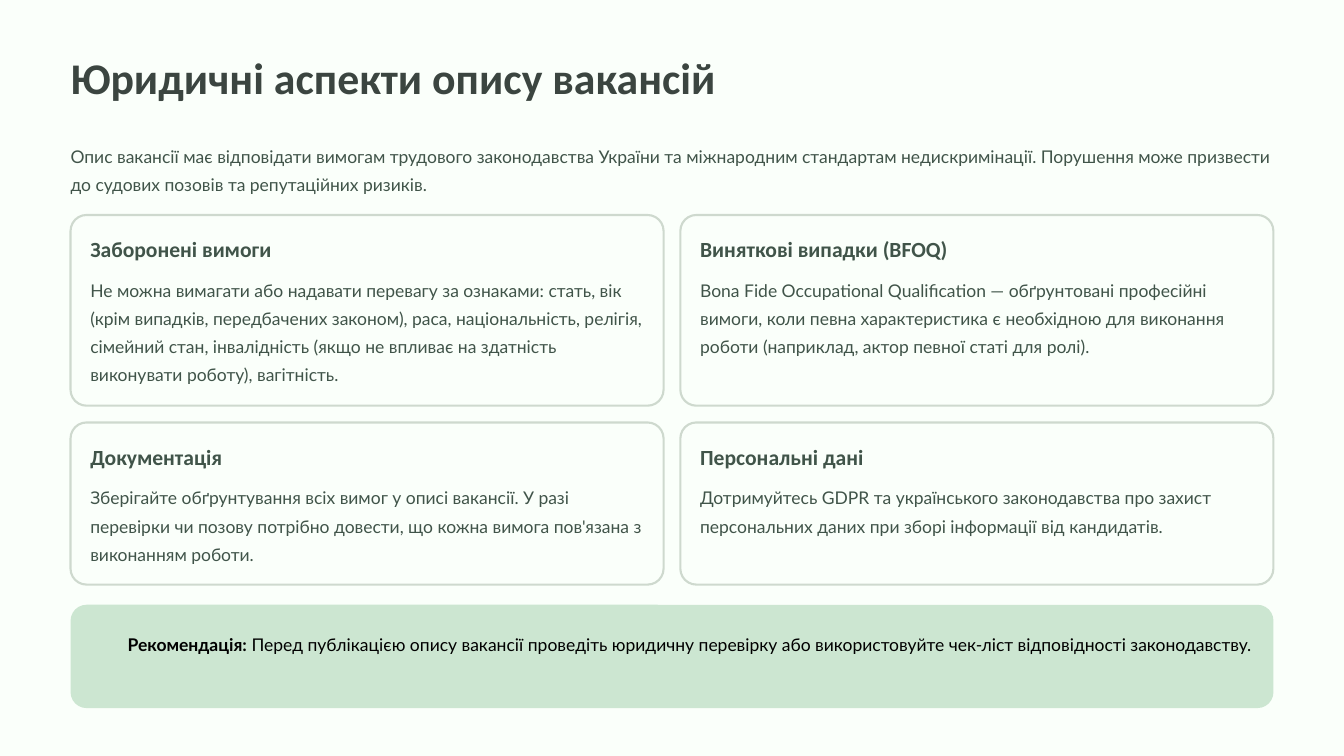
from pptx import Presentation
from pptx.dml.color import RGBColor
from pptx.enum import shapes, text
from pptx.util import Inches, Pt

# Content
TITLE = "Юридичні аспекти опису вакансій"
INTRO = ("Опис вакансії має відповідати вимогам трудового законодавства України та міжнародним "
         "стандартам недискримінації. Порушення може призвести до судових позовів та "
         "репутаційних ризиків.")
CARD_ROWS = [
    [("Заборонені вимоги",
      "Не можна вимагати або надавати перевагу за ознаками: стать, вік (крім випадків, "
      "передбачених законом), раса, національність, релігія, сімейний стан, інвалідність "
      "(якщо не впливає на здатність виконувати роботу), вагітність."),
     ("Виняткові випадки (BFOQ)",
      "Bona Fide Occupational Qualification — обґрунтовані професійні вимоги, коли певна "
      "характеристика є необхідною для виконання роботи (наприклад, актор певної статі для ролі).")],
    [("Документація",
      "Зберігайте обґрунтування всіх вимог у описі вакансії. У разі перевірки чи позову "
      "потрібно довести, що кожна вимога пов'язана з виконанням роботи."),
     ("Персональні дані",
      "Дотримуйтесь GDPR та українського законодавства про захист персональних даних при "
      "зборі інформації від кандидатів.")],
]
ADVICE_LABEL = "Рекомендація:"
ADVICE = (" Перед публікацією опису вакансії проведіть юридичну перевірку або використовуйте "
          "чек-ліст відповідності законодавству.")

COLORS = {"paper": "FAFFFA", "title": "3B4540", "body": "405449",
          "border": "CED9CE", "advice": "CCE6D1", "black": "000000"}

# Layout in inches
MARGIN, CONTENT_WIDTH = 0.84, 14.32
CARD_WIDTH, GAP, PADDING = 7.06, 0.2, 0.235
CARDS_TOP, ROW_HEIGHTS = 2.56, [2.27, 1.93]
HEADING_HEIGHT, BODY_OFFSET = 0.33, 0.69
RADIUS = 0.19

# Text styles: font, size, line spacing
TITLE_STYLE = ("Calibri", 37.5, 47)
HEADING_STYLE = ("Calibri", 18.5, 23.5)
BODY_STYLE = ("Lato", 15, 24)

presentation = Presentation()
presentation.slide_width, presentation.slide_height = Inches(16), Inches(9)
slide = presentation.slides.add_slide(presentation.slide_layouts[6])


def color(name):
    return RGBColor.from_string(COLORS[name])


def add_text(left, top, width, height, runs, style, color_name, wrap=True):
    """Add one paragraph; runs are (wording, bold) pairs."""
    box = slide.shapes.add_textbox(Inches(left), Inches(top), Inches(width), Inches(height))
    frame = box.text_frame
    frame.word_wrap = wrap
    frame.vertical_anchor = text.MSO_ANCHOR.TOP
    frame.margin_left = frame.margin_right = frame.margin_top = frame.margin_bottom = 0
    font_name, size, spacing = style
    paragraph = frame.paragraphs[0]
    paragraph.line_spacing = Pt(spacing)
    for wording, bold in runs:
        run = paragraph.add_run()
        run.text = wording
        run.font.name, run.font.size, run.font.bold = font_name, Pt(size), bold
        run.font.color.rgb = color(color_name)


def add_panel(left, top, width, height, fill, border=None):
    panel = slide.shapes.add_shape(shapes.MSO_SHAPE.ROUNDED_RECTANGLE, Inches(left),
                                   Inches(top), Inches(width), Inches(height))
    panel.adjustments[0] = RADIUS / height
    panel.shadow.inherit = False
    panel.fill.solid()
    panel.fill.fore_color.rgb = color(fill)
    if border:
        panel.line.color.rgb = color(border)
        panel.line.width = Pt(1.8)
    else:
        panel.line.fill.background()


# Background, title and introduction
slide.background.fill.solid()
slide.background.fill.fore_color.rgb = color("paper")
add_text(MARGIN, 0.58, 9.46, 0.66, [(TITLE, True)], TITLE_STYLE, "title", wrap=False)
add_text(MARGIN, 1.65, CONTENT_WIDTH, 0.67, [(INTRO, False)], BODY_STYLE, "body")

# Cards
top = CARDS_TOP
inner_width = CARD_WIDTH - 2 * PADDING
for row, height in zip(CARD_ROWS, ROW_HEIGHTS):
    for column, (heading, body) in enumerate(row):
        left = MARGIN + column * (CARD_WIDTH + GAP)
        add_panel(left, top, CARD_WIDTH, height, "paper", "border")
        add_text(left + PADDING, top + PADDING, inner_width, HEADING_HEIGHT,
                 [(heading, True)], HEADING_STYLE, "body", wrap=False)
        add_text(left + PADDING, top + BODY_OFFSET, inner_width, height - BODY_OFFSET - PADDING,
                 [(body, False)], BODY_STYLE, "body")
    top += height + GAP

# Recommendation
add_panel(MARGIN, 7.2, CONTENT_WIDTH, 1.23, "advice")
add_text(1.52, 7.47, 13.43, 0.67, [(ADVICE_LABEL, True), (ADVICE, False)], BODY_STYLE, "black")

presentation.save("out.pptx")
